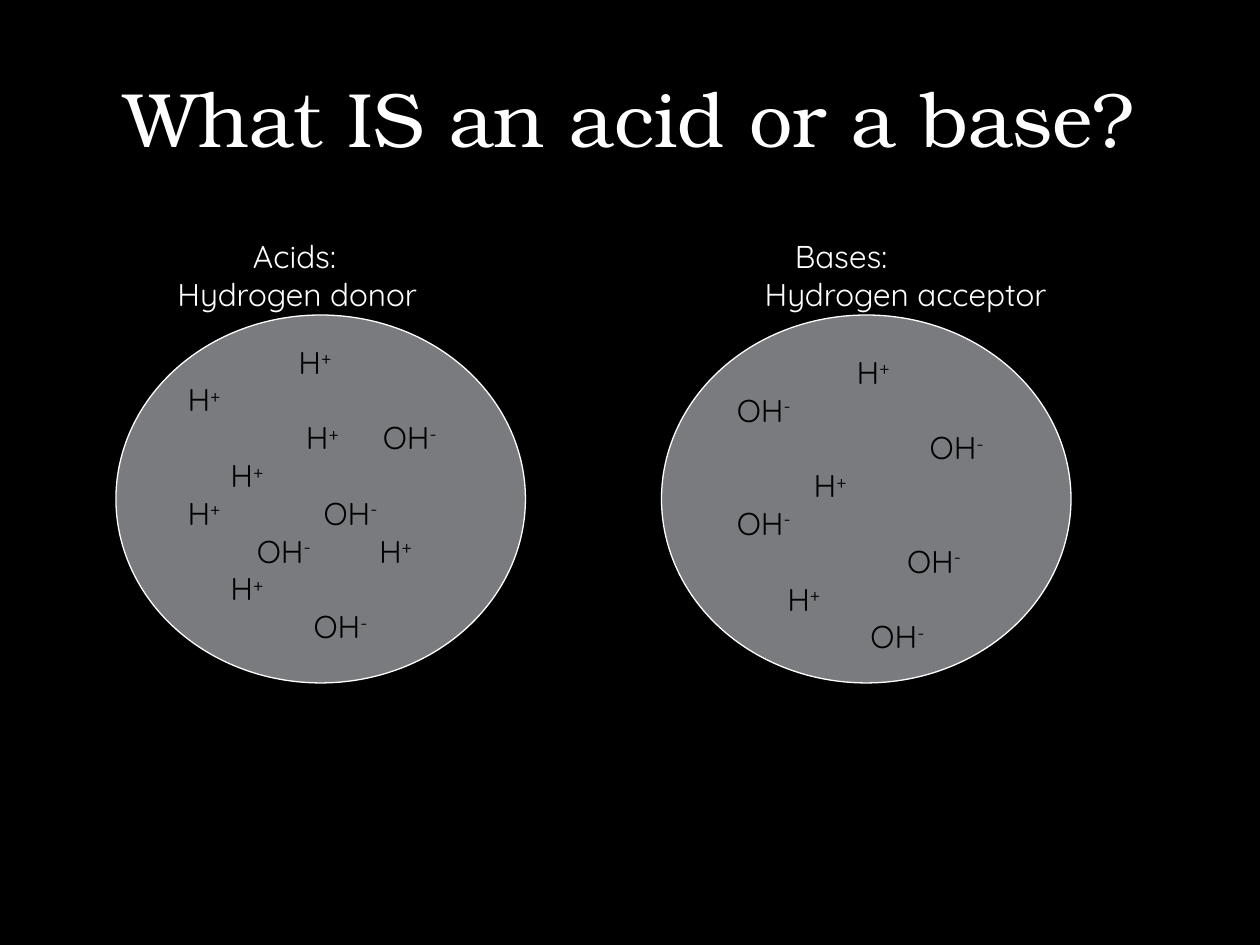
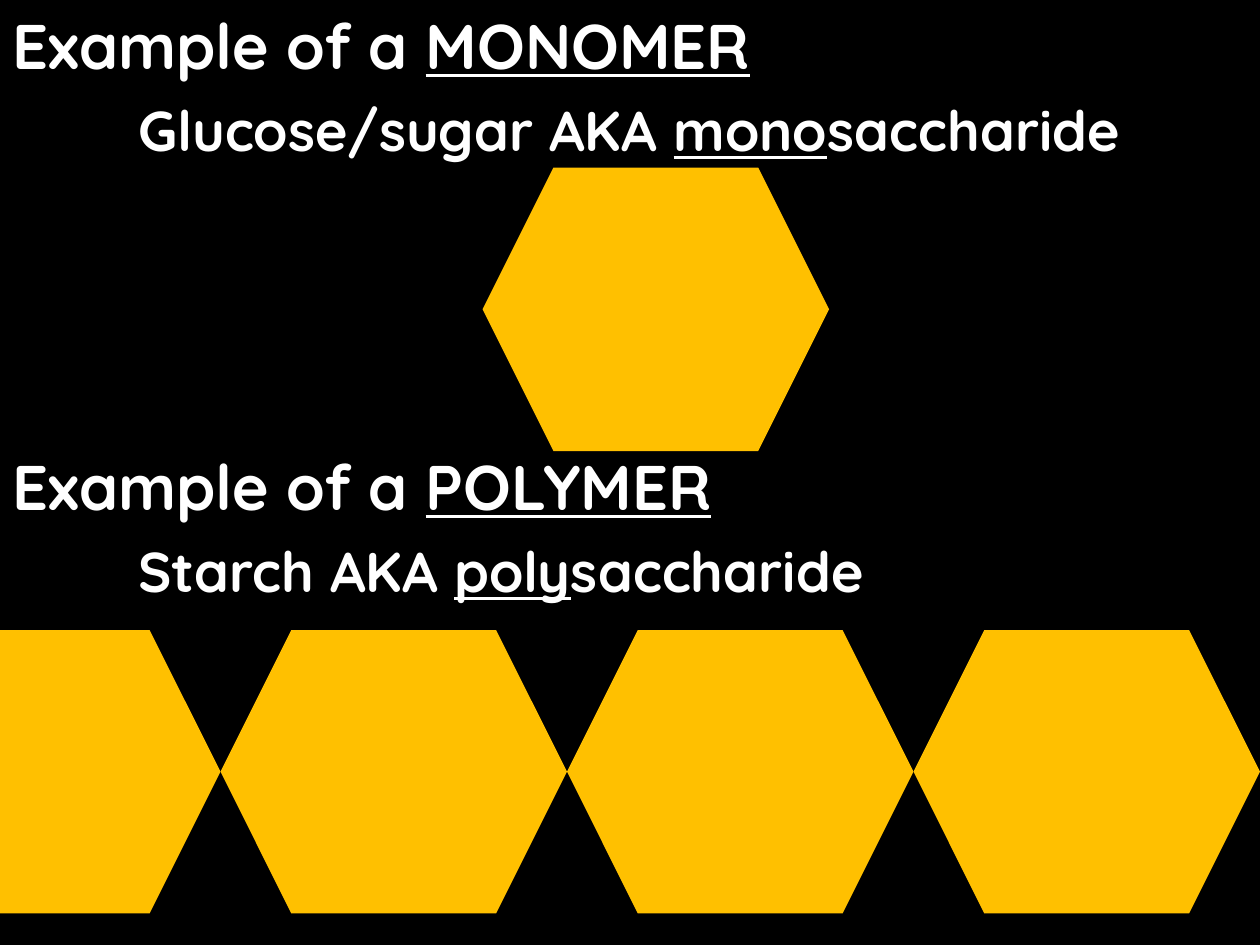
from dataclasses import dataclass

from lxml import etree
from pptx import Presentation
from pptx.dml.color import RGBColor
from pptx.enum.shapes import MSO_SHAPE
from pptx.enum.text import MSO_ANCHOR, PP_ALIGN
from pptx.oxml.ns import qn
from pptx.util import Inches, Pt


@dataclass(frozen=True)
class Theme:
    black: RGBColor = RGBColor(0x00, 0x00, 0x00)
    white: RGBColor = RGBColor(0xFF, 0xFF, 0xFF)
    gray: RGBColor = RGBColor(0x79, 0x7B, 0x7E)
    gold: RGBColor = RGBColor(0xFF, 0xC0, 0x00)
    title_font: str = "TeX Gyre Bonum"
    body_font: str = "Quicksand"
    title_size: int = 44
    heading_size: int = 36
    example_size: int = 32
    body_size: int = 18


THEME = Theme()

TITLE = "What IS an acid or a base?"

# Each line lists (distance from the text edge, words).
CAPTIONS = [
    [(1.41, "Acids:"), (5.71, "Bases:")],
    [(0.81, "Hydrogen donor"), (5.47, "Hydrogen acceptor")],
]
CAPTION_BOX = (0.5, 1.83, 8.5, 0.71)

HYDROGEN, HYDROXIDE = ("H", "+"), ("OH", "-")
SOLUTIONS = [
    {
        "circle": (0.92, 2.5, 3.25, 2.92),
        "ion_box": (1.33, 2.67, 2.42, 2.52),
        "ions": [
            [(0.94, HYDROGEN)],
            [(0.06, HYDROGEN)],
            [(1.0, HYDROGEN), (1.61, HYDROXIDE)],
            [(0.4, HYDROGEN)],
            [(0.06, HYDROGEN), (1.14, HYDROXIDE)],
            [(0.61, HYDROXIDE), (1.58, HYDROGEN)],
            [(0.4, HYDROGEN)],
            [(1.06, HYDROXIDE)],
        ],
    },
    {
        "circle": (5.25, 2.5, 3.25, 2.92),
        "ion_box": (5.75, 2.75, 2.42, 2.52),
        "ions": [
            [(0.95, HYDROGEN)],
            [(0, HYDROXIDE)],
            [(1.53, HYDROXIDE)],
            [(0.61, HYDROGEN)],
            [(0, HYDROXIDE)],
            [(1.35, HYDROXIDE)],
            [(0.4, HYDROGEN)],
            [(1.06, HYDROXIDE)],
        ],
    },
]

# Each run is (words, underlined).
EXAMPLES = [
    {
        "box": (0, 0, 9.37, 1.38),
        "heading": [("Example of a ", False), ("MONOMER", True)],
        "example": [("Glucose/sugar AKA ", False), ("mono", True), ("saccharide", False)],
    },
    {
        "box": (0, 3.5, 7.94, 1.38),
        "heading": [("Example of a ", False), ("POLYMER", True)],
        "example": [("Starch AKA ", False), ("poly", True), ("saccharide", False)],
    },
]
UNIT_WIDTH, UNIT_HEIGHT = 2.75, 2.25
MONOMER_AT = (3.83, 1.33)
CHAIN_AT = (-1, 5)
CHAIN_LENGTH = 4


def add_span(para, text, size, color, font=THEME.body_font):
    span = para.add_run()
    span.text = text
    span.font.name = font
    span.font.size = Pt(size)
    span.font.color.rgb = color
    return span


def add_text_frame(page, place):
    frame = page.shapes.add_textbox(*map(Inches, place)).text_frame
    frame.word_wrap = True
    return frame


def next_para(frame, index):
    return frame.add_paragraph() if index else frame.paragraphs[0]


def add_figure(page, preset, place, fill, line=None):
    figure = page.shapes.add_shape(preset, *map(Inches, place))
    figure.shadow.inherit = False
    figure.fill.solid()
    figure.fill.fore_color.rgb = fill
    if line is None:
        figure.line.fill.background()
    else:
        figure.line.color.rgb = line
        figure.line.width = Pt(0.75)


def set_tab_stops(para, stops):
    tab_list = etree.SubElement(para._p.get_or_add_pPr(), qn("a:tabLst"))
    for stop in stops:
        etree.SubElement(tab_list, qn("a:tab"), pos=str(Inches(stop)), algn="l")


def add_tabbed_lines(page, place, lines, color):
    """Start every item of a line at its own tab stop; a pair is a symbol and its charge."""
    frame = add_text_frame(page, place)
    for index, line in enumerate(lines):
        para = next_para(frame, index)
        set_tab_stops(para, [stop for stop, _ in line if stop])
        for stop, item in line:
            word, charge = item if isinstance(item, tuple) else (item, None)
            add_span(para, ("\t" if stop else "") + word, THEME.body_size, color)
            if charge:
                raised = add_span(para, charge, THEME.body_size, color)
                raised._r.get_or_add_rPr().set("baseline", "30000")


def add_example(page, place, heading, example):
    frame = add_text_frame(page, place)
    levels = [(heading, THEME.heading_size), (example, THEME.example_size)]
    for index, (runs, size) in enumerate(levels):
        para = next_para(frame, index)
        if index:
            para._p.get_or_add_pPr().set("marL", str(Inches(1)))
            para.space_before = Pt(8)
        for text, underlined in runs:
            span = add_span(para, text, size, THEME.white)
            span.font.bold = True
            span.font.underline = underlined


def build_acid_base_page(deck):
    page = deck.slides.add_slide(deck.slide_layouts.get_by_name("Title Only"))
    title = page.shapes.title
    title.left, title.top, title.width, title.height = map(Inches, (0.5, 0.3, 9, 1.25))
    title.text_frame.vertical_anchor = MSO_ANCHOR.MIDDLE
    para = title.text_frame.paragraphs[0]
    para.alignment = PP_ALIGN.CENTER
    add_span(para, TITLE, THEME.title_size, THEME.white, THEME.title_font)

    for solution in SOLUTIONS:
        add_figure(page, MSO_SHAPE.OVAL, solution["circle"], THEME.gray, THEME.white)
    add_tabbed_lines(page, CAPTION_BOX, CAPTIONS, THEME.white)
    for solution in SOLUTIONS:
        add_tabbed_lines(page, solution["ion_box"], solution["ions"], THEME.black)


def build_polymer_page(deck):
    page = deck.slides.add_slide(deck.slide_layouts.get_by_name("Blank"))
    chain_left, chain_top = CHAIN_AT
    chain = [(chain_left + unit * UNIT_WIDTH, chain_top) for unit in range(CHAIN_LENGTH)]
    for left, top in [MONOMER_AT, *chain]:
        place = (left, top, UNIT_WIDTH, UNIT_HEIGHT)
        add_figure(page, MSO_SHAPE.HEXAGON, place, THEME.gold)
    for part in EXAMPLES:
        add_example(page, part["box"], part["heading"], part["example"])


def main():
    deck = Presentation()
    deck.slide_width, deck.slide_height = Inches(10), Inches(7.5)
    background = deck.slide_master.background.fill
    background.solid()
    background.fore_color.rgb = THEME.black
    build_acid_base_page(deck)
    build_polymer_page(deck)
    deck.save("out.pptx")


if __name__ == "__main__":
    main()
